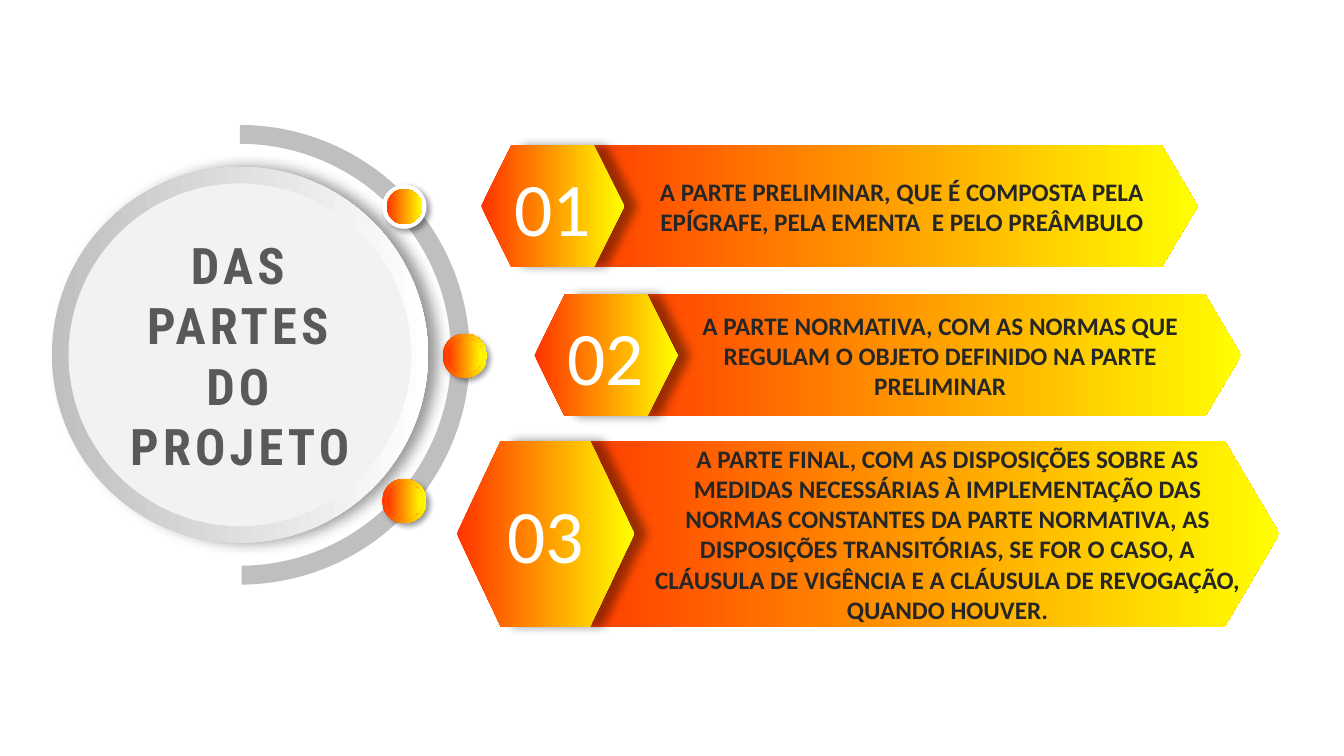
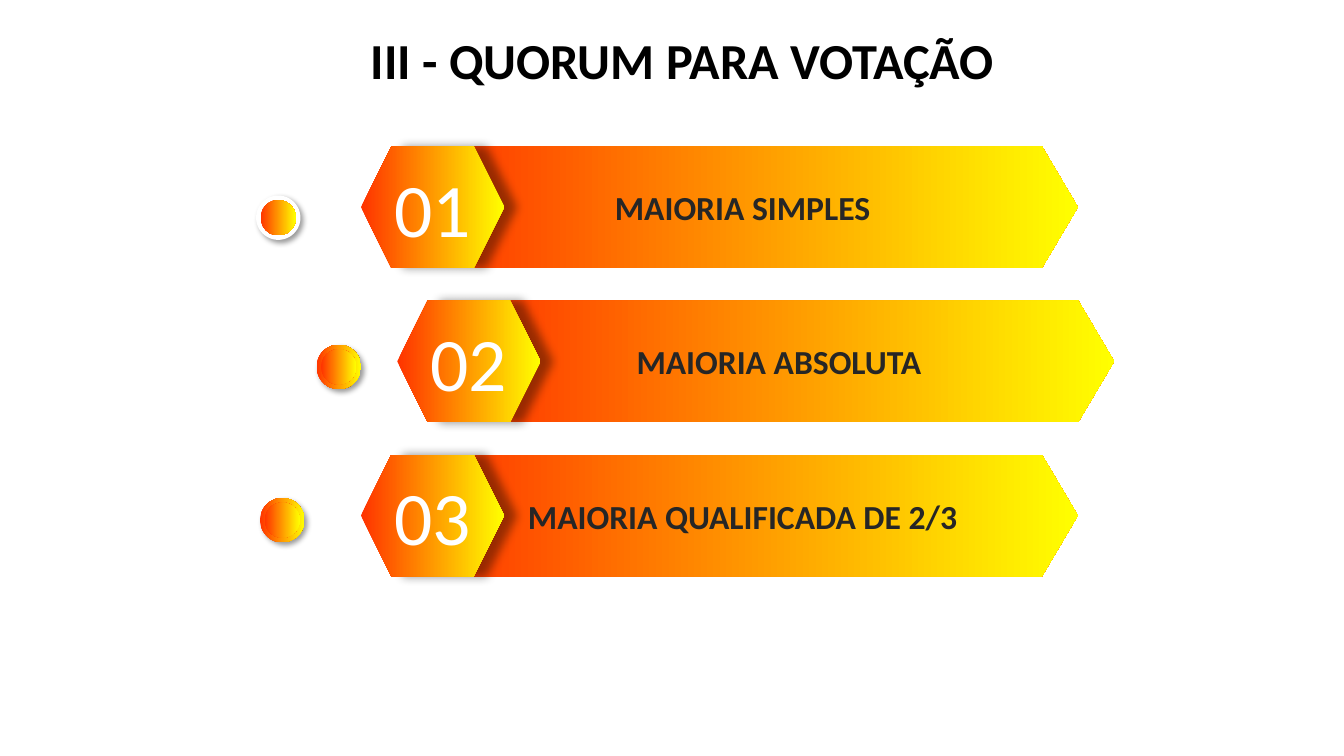
from lxml import etree
from pptx import Presentation
from pptx.dml.color import RGBColor
from pptx.enum.shapes import MSO_SHAPE
from pptx.enum.text import MSO_ANCHOR, PP_ALIGN
from pptx.oxml.ns import qn
from pptx.util import Inches, Pt

ARC, OVAL = MSO_SHAPE.BLOCK_ARC, MSO_SHAPE.OVAL
PLATE, HEXAGON = MSO_SHAPE.PENTAGON, MSO_SHAPE.HEXAGON
CENTER, MIDDLE = PP_ALIGN.CENTER, MSO_ANCHOR.MIDDLE

BODY_FONT, HUB_FONT = "Calibri", "Roboto Condensed"
WHITE, BLACK, INK = "FFFFFF", "000000", "262626"
GRAY, PALE, HUB_INK = "BFBFBF", "F2F2F2", "595959"
FIRE = ("FF3300", "FFFF00")
SILVER = (GRAY, WHITE)

# Shadows: blur and distance in points, direction in degrees
RING_SHADOW, DOT_SHADOW, BADGE_SHADOW = (10, 7, 0), (4, 3, 45), (7, 9, 0)

DOT, DOT_CORE = 0.44, 0.35
PLATE_W, BADGE_W, ROW_H = 6.47, 1.42, 1.21
PLATE_POINT = 0.295

HUB_TEXT = "DAS PARTES DO PROJETO"
HUB_CENTER = (2.38, 3.52)
PARTS_DOTS = [(3.79, 1.83), (4.39, 3.31), (3.79, 4.75)]
PARTS = [
    dict(text="A PARTE PRELIMINAR, QUE É COMPOSTA PELA EPÍGRAFE, "
              "PELA EMENTA  E PELO PREÂMBULO",
         badge_x=4.77, plate_x=5.41, y=1.44, indent=0.78),
    dict(text="A PARTE NORMATIVA, COM AS NORMAS QUE REGULAM O OBJETO "
              "DEFINIDO NA PARTE PRELIMINAR",
         badge_x=5.3, plate_x=5.84, y=2.92, indent=0.68),
    dict(text="A PARTE FINAL, COM AS DISPOSIÇÕES SOBRE AS MEDIDAS NECESSÁRIAS "
              "À IMPLEMENTAÇÃO DAS NORMAS CONSTANTES DA PARTE NORMATIVA, AS "
              "DISPOSIÇÕES TRANSITÓRIAS, SE FOR O CASO, A CLÁUSULA DE VIGÊNCIA "
              "E A CLÁUSULA DE REVOGAÇÃO, QUANDO HOUVER.",
         badge_x=4.53, plate_x=5.41, y=4.37, indent=0.97,
         plate_w=7.28, badge_w=1.76, h=1.85),
]

QUORUM_TITLE = "III - QUORUM PARA VOTAÇÃO"
QUORUM_DOTS = [(2.54, 1.94), (3.14, 3.42), (2.58, 4.94)]
QUORUMS = ["MAIORIA SIMPLES", "MAIORIA ABSOLUTA", "MAIORIA QUALIFICADA DE 2/3"]
QUORUM_LEFT, QUORUM_TOP, QUORUM_STEP = 3.58, 1.45, 1.53
QUORUM_SHIFT, PLATE_OFFSET = 0.36, 0.64


def rgb(color):
    return RGBColor.from_string(color)


def add_shadow(sp, blur, distance, direction):
    effects = sp._element.spPr.find(qn("a:effectLst"))
    shadow = etree.SubElement(
        effects, qn("a:outerShdw"), blurRad=str(Pt(blur)), dist=str(Pt(distance)),
        dir=str(direction * 60000), algn="ctr", rotWithShape="0")
    color = etree.SubElement(shadow, qn("a:srgbClr"), val=BLACK)
    etree.SubElement(color, qn("a:alpha"), val="40000")


def add_shape(shapes, kind, x, y, w, h, fill, shadow=None):
    """Add a borderless shape; fill is one colour or a left-to-right pair."""
    sp = shapes.add_shape(kind, Inches(x), Inches(y), Inches(w), Inches(h))
    sp.line.fill.background()
    if isinstance(fill, tuple):
        sp.fill.gradient()
        sp.fill.gradient_angle = 0
        for stop, color in zip(sp.fill.gradient_stops, fill):
            stop.color.rgb = rgb(color)
    else:
        sp.fill.solid()
        sp.fill.fore_color.rgb = rgb(fill)
    sp.shadow.inherit = False
    if shadow:
        add_shadow(sp, *shadow)
    return sp


def write(sp, text, size, color, bold=False, font=BODY_FONT, align=CENTER):
    tf = sp.text_frame
    tf.vertical_anchor = MIDDLE
    p = tf.paragraphs[0]
    p.alignment = align
    p.font.name, p.font.size, p.font.bold = font, Pt(size), bold
    p.font.color.rgb = rgb(color)
    r = p.add_run()
    r.text = text
    return p, r


def add_disc(s, diameter, fill, shadow=None, kind=OVAL):
    """Add a round shape centred on the hub."""
    x, y = (c - diameter / 2 for c in HUB_CENTER)
    return add_shape(s.shapes, kind, x, y, diameter, diameter, fill, shadow)


def add_hub(s):
    arc = add_disc(s, 4.56, GRAY, kind=ARC)
    arc.rotation = 90
    for i, value in enumerate((108, 215.748, 0.041)):
        arc.adjustments[i] = value
    add_disc(s, 3.73, SILVER, RING_SHADOW)
    _, r = write(add_disc(s, 3.4, PALE), HUB_TEXT, 36, HUB_INK, True, HUB_FONT)
    r.font._element.set("spc", "300")


def add_dots(s, places):
    """Add the round markers; the first one has a white rim."""
    inset = (DOT - DOT_CORE) / 2
    for i, (x, y) in enumerate(places):
        shapes = s.shapes.add_group_shape().shapes
        add_shape(shapes, OVAL, x, y, DOT, DOT, FIRE if i else WHITE, DOT_SHADOW)
        add_shape(shapes, OVAL, x + inset, y + inset, DOT_CORE, DOT_CORE, FIRE)


def add_row(s, number, text, size, badge_x, plate_x, y, indent=0,
            plate_w=PLATE_W, badge_w=BADGE_W, h=ROW_H):
    plate = add_shape(s.shapes, PLATE, plate_x, y, plate_w, h, FIRE)
    plate.adjustments[0] = PLATE_POINT
    p, _ = write(plate, text, size, INK, True)
    if indent:
        p._p.get_or_add_pPr().set("marL", str(Inches(indent)))
    badge = add_shape(s.shapes, HEXAGON, badge_x, y, badge_w, h, FIRE, BADGE_SHADOW)
    write(badge, f"{number:02}", 54, WHITE)


def build_parts(s):
    add_hub(s)
    add_dots(s, PARTS_DOTS)
    for number, part in enumerate(PARTS, 1):
        add_row(s, number, size=18, **part)


def build_quorum(s):
    title = s.shapes.add_textbox(Inches(3.58), Inches(0.23), Inches(6.46), Inches(0.71))
    title.text_frame.word_wrap = False
    write(title, QUORUM_TITLE, 36, BLACK, True, align=PP_ALIGN.LEFT)
    add_dots(s, QUORUM_DOTS)
    for i, text in enumerate(QUORUMS):
        x = QUORUM_LEFT + QUORUM_SHIFT * (i % 2)
        add_row(s, i + 1, text, 24, x, x + PLATE_OFFSET, QUORUM_TOP + QUORUM_STEP * i)


def main():
    prs = Presentation()
    prs.slide_width, prs.slide_height = Inches(13.33), Inches(7.5)
    for build in (build_parts, build_quorum):
        build(prs.slides.add_slide(prs.slide_layouts[6]))
    prs.save("out.pptx")


if __name__ == "__main__":
    main()
